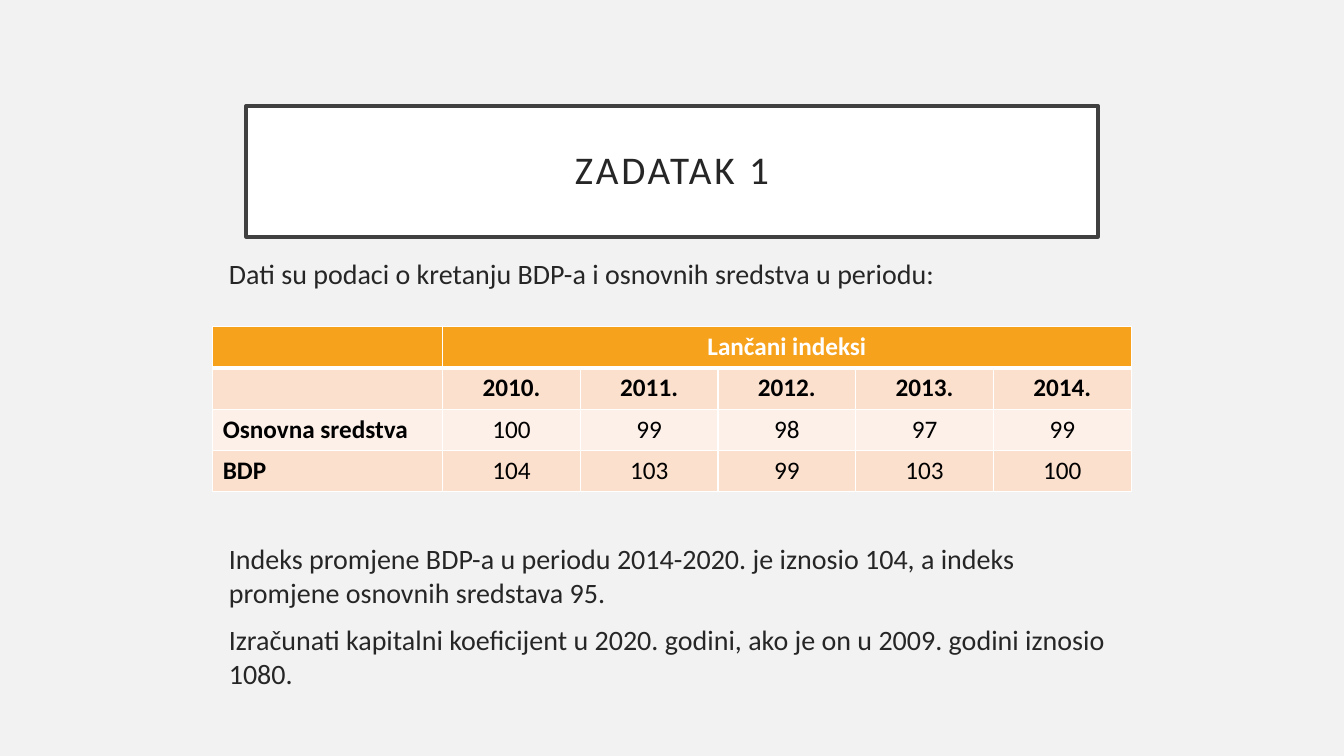
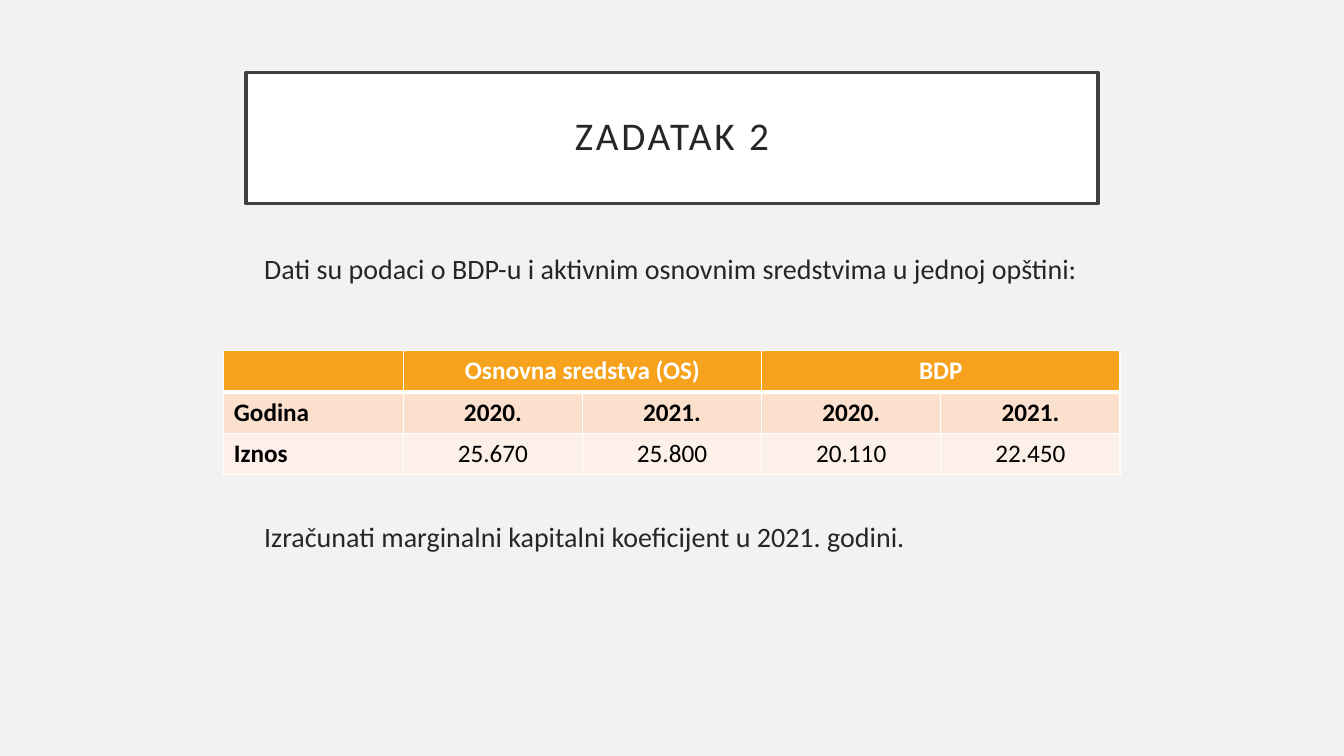
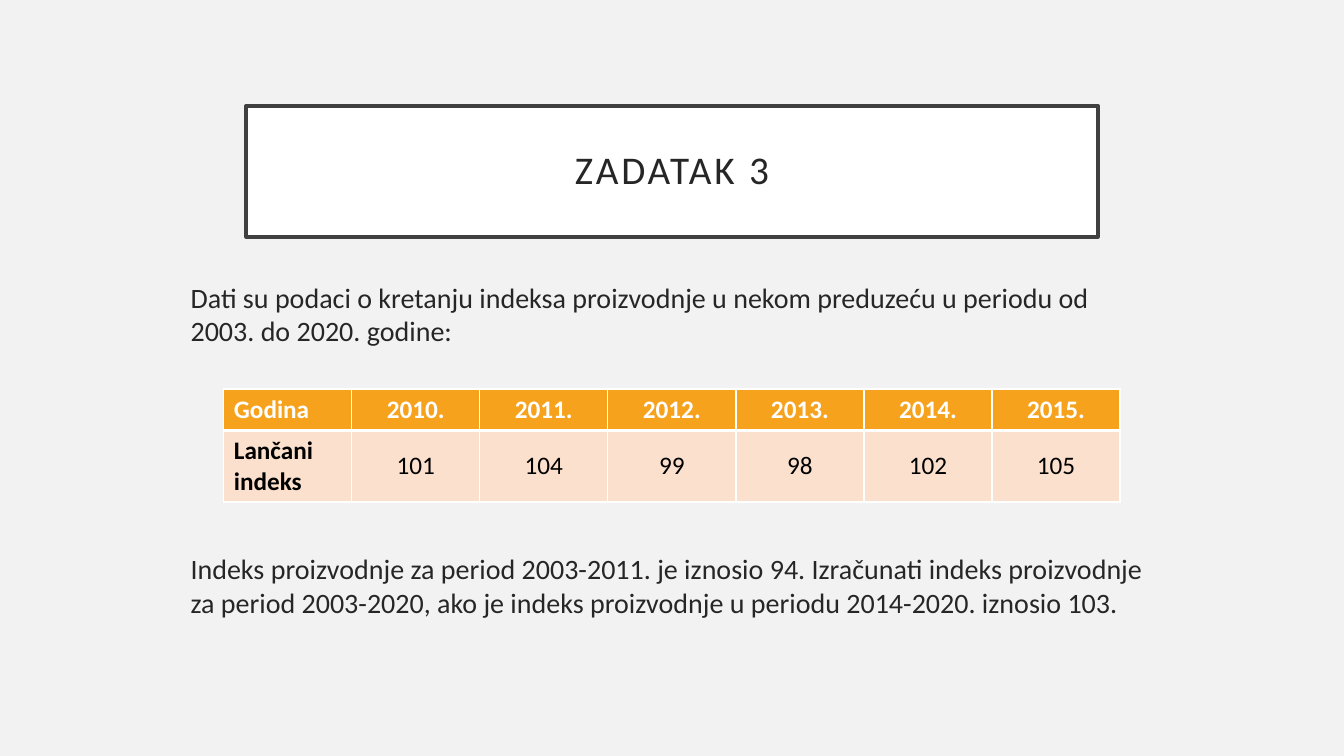
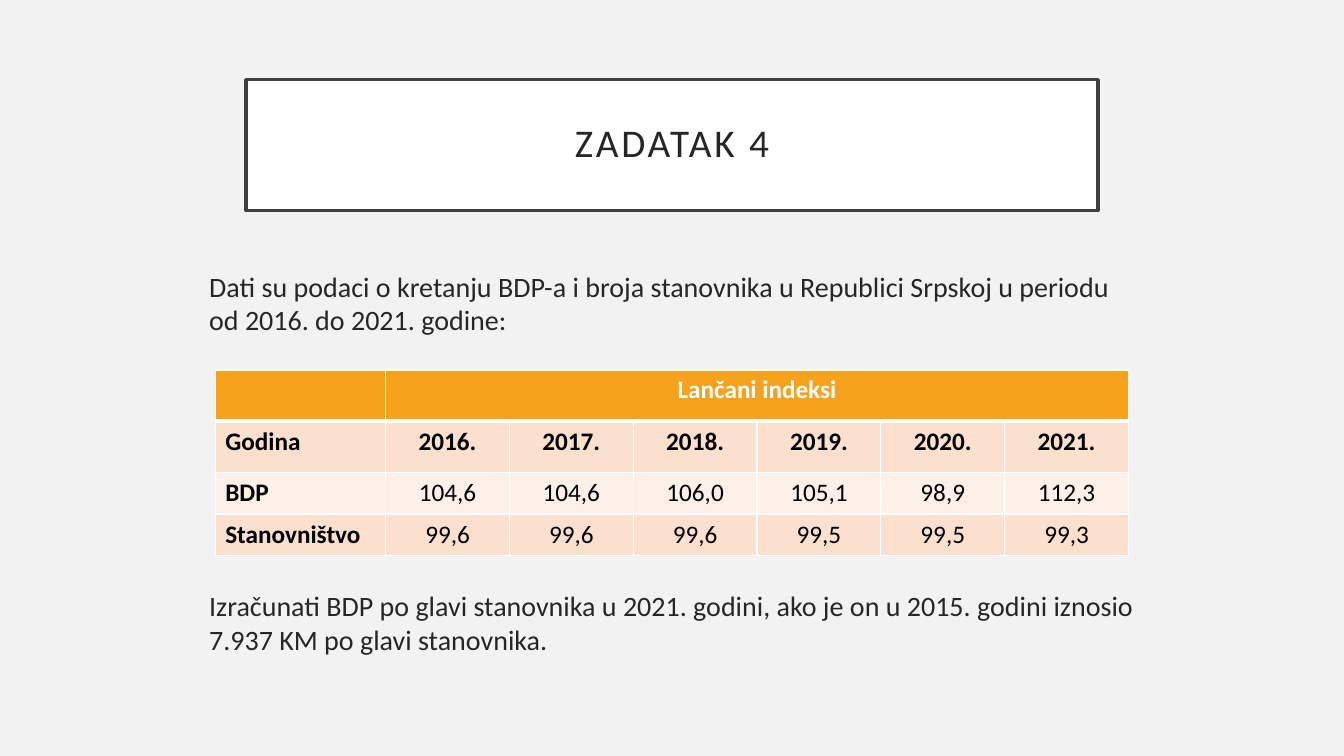
from lxml import etree
from pptx import Presentation
from pptx.dml.color import RGBColor
from pptx.enum.text import MSO_ANCHOR, MSO_AUTO_SIZE, PP_ALIGN
from pptx.oxml.ns import qn
from pptx.util import Inches, Pt

# Shared look
FONT = "Calibri"
BACKGROUND = RGBColor(0xF2, 0xF2, 0xF2)
WHITE = RGBColor(0xFF, 0xFF, 0xFF)
BLACK = RGBColor(0, 0, 0)
INK = RGBColor(0x26, 0x26, 0x26)
FRAME = RGBColor(0x40, 0x40, 0x40)
ORANGE = RGBColor(0xF6, 0xA2, 0x1D)
BANDS = (RGBColor(0xFB, 0xE0, 0xCD), RGBColor(0xFD, 0xF0, 0xE8))
SLIDE_W, SLIDE_H = 13.33, 7.5
TITLE_W, TITLE_H = 8.45, 1.3

# Content: None continues the heading on its left; "gap" is the space in
# points left for the table between the introduction and the question
TASKS = [
    dict(
        title="ZADATAK 1", title_top=1.05,
        body=(2.49, 8.99, 4.53), gap=180,
        intro="Dati su podaci o kretanju BDP-a i osnovnih sredstva u periodu:",
        questions=[
            "Indeks promjene BDP-a u periodu 2014-2020. je iznosio 104, a indeks "
            "promjene osnovnih sredstava 95.",
            "Izračunati kapitalni koeficijent u 2020. godini, ako je on u 2009. "
            "godini iznosio 1080.",
        ],
        table=(3.24, 9.11), label_width=2.28, row_heights=[0.41] * 4,
        rows=[
            ["", "Lančani indeksi", None, None, None, None],
            ["", "2010.", "2011.", "2012.", "2013.", "2014."],
            ["Osnovna sredstva", "100", "99", "98", "97", "99"],
            ["BDP", "104", "103", "99", "103", "100"],
        ],
    ),
    dict(
        title="ZADATAK 2", title_top=0.72,
        body=(2.44, 8.29, 4.51), gap=168,
        intro="Dati su podaci o BDP-u i aktivnim osnovnim sredstvima u jednoj "
              "opštini:",
        questions=["Izračunati marginalni kapitalni koeficijent u 2021. godini."],
        table=(3.48, 8.89), label_width=1.78, row_heights=[0.41] * 3,
        rows=[
            ["", "Osnovna sredstva (OS)", None, "BDP", None],
            ["Godina", "2020.", "2021.", "2020.", "2021."],
            ["Iznos", "25.670", "25.800", "20.110", "22.450"],
        ],
    ),
    dict(
        title="ZADATAK 3", title_top=1.05,
        body=(2.73, 9.75, 3.71), gap=146,
        intro="Dati su podaci o kretanju indeksa proizvodnje u nekom preduzeću u "
              "periodu od 2003. do 2020. godine:",
        questions=[
            "Indeks proizvodnje za period 2003-2011. je iznosio 94. Izračunati "
            "indeks proizvodnje za period 2003-2020, ako je indeks proizvodnje u "
            "periodu 2014-2020. iznosio 103.",
        ],
        table=(3.86, 8.89), label_width=1.27, row_heights=[0.41, 0.7],
        rows=[
            ["Godina", "2010.", "2011.", "2012.", "2013.", "2014.", "2015."],
            ["Lančani indeks", "101", "104", "99", "98", "102", "105"],
        ],
        values_anchor=MSO_ANCHOR.MIDDLE,
    ),
    dict(
        title="ZADATAK 4", title_top=0.79,
        body=(2.62, 9.38, 4.62), gap=180,
        intro="Dati su podaci o kretanju BDP-a i broja stanovnika u Republici "
              "Srpskoj u periodu od 2016. do 2021. godine:",
        questions=[
            "Izračunati BDP po glavi stanovnika u 2021. godini, ako je on u 2015. "
            "godini iznosio 7.937 KM po glavi stanovnika.",
        ],
        table=(3.67, 9.06), label_width=1.69,
        row_heights=[0.51, 0.51, 0.41, 0.41],
        rows=[
            ["", "Lančani indeksi", None, None, None, None, None],
            ["Godina", "2016.", "2017.", "2018.", "2019.", "2020.", "2021."],
            ["BDP", "104,6", "104,6", "106,0", "105,1", "98,9", "112,3"],
            ["Stanovništvo", "99,6", "99,6", "99,6", "99,5", "99,5", "99,3"],
        ],
    ),
]


def centred(top, width, height):
    """Left, top, width and height of a part centred across the slide."""
    return [Inches(n) for n in ((SLIDE_W - width) / 2, top, width, height)]


def place(part, box):
    part.left, part.top, part.width, part.height = box


def style_font(font, size, color, bold=False):
    font.name, font.size, font.bold = FONT, Pt(size), bold
    font.color.rgb = color


def fill_title(title, task):
    place(title, centred(task["title_top"], TITLE_W, TITLE_H))
    title.fill.solid()
    title.fill.fore_color.rgb = WHITE
    title.line.color.rgb = FRAME
    title.line.width = Pt(2.5)
    frame = title.text_frame
    frame.text = task["title"]
    frame.auto_size = MSO_AUTO_SIZE.NONE
    frame.vertical_anchor = MSO_ANCHOR.MIDDLE
    frame.margin_left = frame.margin_right = Inches(0.2)
    frame.margin_top = frame.margin_bottom = Inches(0.2)
    heading = frame.paragraphs[0]
    heading.alignment = PP_ALIGN.CENTER
    heading.line_spacing = 0.9
    run = heading.runs[0]
    style_font(run.font, 28, INK)
    run.font._element.set("spc", "200")


def fill_body(body, task):
    place(body, centred(*task["body"]))
    frame = body.text_frame
    frame.text = "\n".join([task["intro"], *task["questions"]])
    frame.auto_size = MSO_AUTO_SIZE.NONE
    for i, paragraph in enumerate(frame.paragraphs):
        paragraph.space_before = Pt(task["gap"] if i == 1 else 10)
        style_font(paragraph.runs[0].font, 20, INK)
        # No bullet, no hanging indent
        properties = paragraph._p.get_or_add_pPr()
        properties.set("marL", "0")
        properties.set("indent", "0")
        etree.SubElement(properties, qn("a:buNone"))


def draw_borders(cell, row):
    """White grid, with a heavier rule under the heading row."""
    properties = cell._tc.get_or_add_tcPr()
    widths = dict(L=1, R=1, T=3 if row == 1 else 1, B=3 if row == 0 else 1)
    for side, width in widths.items():
        line = etree.SubElement(properties, qn(f"a:ln{side}"), w=str(Pt(width)))
        fill = etree.SubElement(line, qn("a:solidFill"))
        etree.SubElement(fill, qn("a:srgbClr"), val=str(WHITE))


def add_data(slide, task):
    rows, heights = task["rows"], task["row_heights"]
    top, width = task["table"]
    count = len(rows[0])
    table = slide.shapes.add_table(
        len(rows), count, *centred(top, width, sum(heights))).table
    table.first_row = table.horz_banding = False

    value_width = (width - task["label_width"]) / (count - 1)
    for c, column in enumerate(table.columns):
        column.width = Inches(value_width if c else task["label_width"])
    for row, height in zip(table.rows, heights):
        row.height = Inches(height)

    for r, texts in enumerate(rows):
        for c, text in enumerate(texts):
            cell = table.cell(r, c)
            draw_borders(cell, r)
            cell.fill.solid()
            cell.fill.fore_color.rgb = BANDS[(r - 1) % 2] if r else ORANGE
            if r:
                cell.vertical_anchor = task.get("values_anchor", MSO_ANCHOR.TOP)
            if not text:
                continue
            cell.text = text
            paragraph = cell.text_frame.paragraphs[0]
            paragraph.alignment = PP_ALIGN.CENTER if c else PP_ALIGN.LEFT
            # Labels and the year row are bold
            bold = r == 0 or c == 0 or text.endswith(".")
            style_font(paragraph.runs[0].font, 18, BLACK if r else WHITE, bold)

    # Join each heading with the empty places to its right
    for c, text in enumerate(rows[0]):
        end = c
        while end + 1 < count and rows[0][end + 1] is None:
            end += 1
        if text and end > c:
            table.cell(0, c).merge(table.cell(0, end))


def main():
    prs = Presentation()
    prs.slide_width, prs.slide_height = Inches(SLIDE_W), Inches(SLIDE_H)
    background = prs.slide_master.background.fill
    background.solid()
    background.fore_color.rgb = BACKGROUND
    for task in TASKS:
        slide = prs.slides.add_slide(prs.slide_layouts[1])
        fill_title(slide.shapes.title, task)
        fill_body(slide.placeholders[1], task)
        add_data(slide, task)
    prs.save("out.pptx")


if __name__ == "__main__":
    main()
